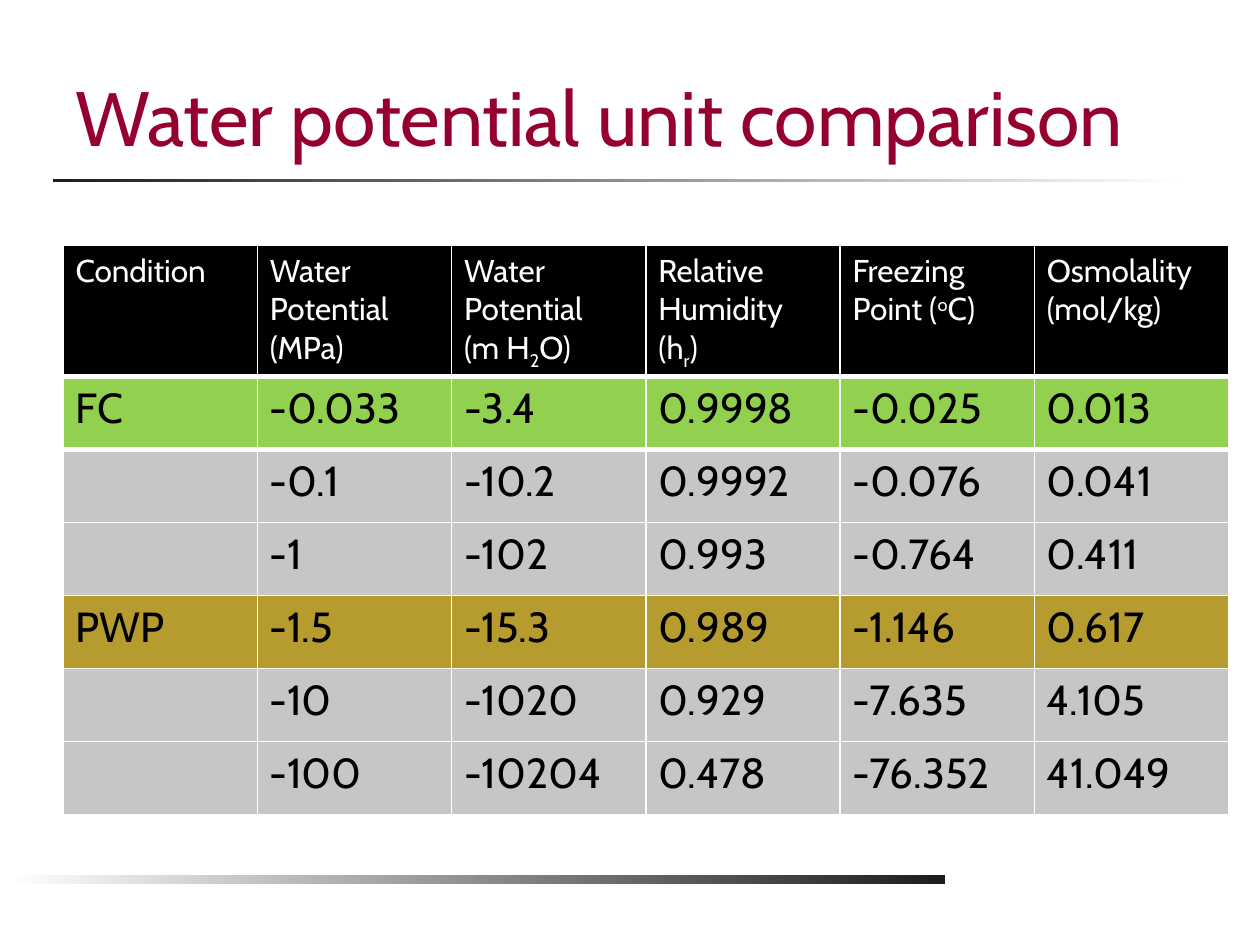
from lxml import etree
from pptx import Presentation
from pptx import util as u
from pptx.dml.color import RGBColor
from pptx.enum import shapes, text
from pptx.oxml.ns import qn

COLOURS = {
    "title": "96002E",
    "dark": "1C1C1C",
    "white": "FFFFFF",
    "black": "000000",
    "field_capacity": "92D050",
    "wilting_point": "B69C2E",
    "plain": "C6C6C6",
}

HEADINGS = [
    [("Condition", 0)],
    [("Water Potential (MPa)", 0)],
    [("Water Potential \n(m H", 0), ("2", -25), ("O)", 0)],
    [("Relative Humidity \n(h", 0), ("r", -25), (")", 0)],
    [("Freezing Point (", 0), ("o", 30), ("C)", 0)],
    [("Osmolality (mol/kg)", 0)],
]

CONDITIONS = [
    ("field_capacity", "FC", "-0.033", "-3.4", "0.9998", "-0.025", "0.013"),
    ("plain", "", "-0.1", "-10.2", "0.9992", "-0.076", "0.041"),
    ("plain", "", "-1", "-102", "0.993", "-0.764", "0.411"),
    ("wilting_point", "PWP", "-1.5", "-15.3", "0.989", "-1.146", "0.617"),
    ("plain", "", "-10", "-1020", "0.929", "-7.635", "4.105"),
    ("plain", "", "-100", "-10204", "0.478", "-76.352", "41.049"),
]


def rgb(name):
    """Return the named colour."""
    return RGBColor.from_string(COLOURS[name])


def write(frame, pieces, size, colour, font="Cabin"):
    """Write (text, baseline) pieces into the first paragraph of a frame."""
    paragraph = frame.paragraphs[0]
    for content, baseline in pieces:
        for index, line in enumerate(content.split("\n")):
            if index:
                paragraph.add_line_break()
            run = paragraph.add_run()
            run.text = line
            run.font.name = font
            run.font.size = u.Pt(size)
            run.font.bold = False
            run.font.color.rgb = rgb(colour)
            if baseline:
                run.font._element.set("baseline", str(baseline * 1000))


class SlideBuilder:
    """Hold the style and the current slide."""

    def __init__(self, slide, line_colour="white"):
        """Keep the slide and the colour of table borders."""
        self.slide = slide
        self.line_colour = line_colour

    def title(self, content, left, top, width, height):
        """Add the bottom-anchored title."""
        frame = self.slide.shapes.add_textbox(left, top, width, height).text_frame
        frame.word_wrap = True
        frame.vertical_anchor = text.MSO_ANCHOR.BOTTOM
        write(frame, [(content, 0)], size=44, colour="title")

    def fading_bar(self, left, top, width, height, colours):
        """Add a bar that fades from the first colour to the second."""
        shape = self.slide.shapes.add_shape(
            shapes.MSO_SHAPE.RECTANGLE, left, top, width, height)
        shape.shadow.inherit = False
        shape.line.fill.background()
        shape.fill.gradient()
        shape.fill.gradient_angle = 0
        for position, (stop, colour) in enumerate(
                zip(shape.fill.gradient_stops, colours)):
            stop.position = position
            stop.color.rgb = rgb(colour)

    def border(self, cell, side, width):
        """Add a solid line on one side of a cell."""
        properties = cell._tc.get_or_add_tcPr()
        line = etree.SubElement(properties, qn(f"a:ln{side}"), w=str(u.Pt(width)))
        fill = etree.SubElement(line, qn("a:solidFill"))
        etree.SubElement(fill, qn("a:srgbClr"), val=COLOURS[self.line_colour])

    def cell(self, cell, pieces, fill, size, colour, top, bottom):
        """Fill a cell with its text, borders and background."""
        for side, width in (("L", 1), ("R", 1), ("T", top), ("B", bottom)):
            self.border(cell, side, width)
        cell.fill.solid()
        cell.fill.fore_color.rgb = rgb(fill)
        write(cell.text_frame, pieces, size, colour)

    def table(self, left, top, width, header_height, row_height):
        """Add the comparison table, with thick lines around its first data row."""
        count = len(CONDITIONS)
        table = self.slide.shapes.add_table(
            count + 1, len(HEADINGS), left, top, width,
            header_height + count * row_height).table
        table.horz_banding = False
        for index, row in enumerate(table.rows):
            row.height = row_height if index else header_height
        for column, pieces in enumerate(HEADINGS):
            self.cell(table.cell(0, column), pieces, "black", 18, "white", 1, 3)
        for row, (fill, *values) in enumerate(CONDITIONS, start=1):
            top_width = 3 if row <= 2 else 1
            bottom_width = 3 if row == 1 else 1
            for column, value in enumerate(values):
                pieces = [(value, 0)] if value else []
                self.cell(table.cell(row, column), pieces, fill, 24, "black",
                          top_width, bottom_width)


def main():
    """Build and save the slide."""
    presentation = Presentation()
    presentation.slide_width = u.Cm(25.4)
    presentation.slide_height = u.Cm(19.05)
    builder = SlideBuilder(
        presentation.slides.add_slide(presentation.slide_layouts[6]))
    builder.fading_bar(u.Cm(1.06), u.Cm(3.6), u.Cm(22.86), u.Cm(0.08),
                       ("dark", "white"))
    builder.fading_bar(u.Cm(0.16), u.Cm(17.63), u.Cm(18.9), u.Cm(0.2),
                       ("white", "dark"))
    builder.title("Water potential unit comparison",
                  u.Cm(1.27), u.Cm(0.58), u.Cm(23.57), u.Cm(2.8))
    builder.table(u.Cm(1.27), u.Cm(4.95), u.Cm(23.5), u.Cm(2.26), u.Cm(1.47))
    presentation.save("out.pptx")


if __name__ == "__main__":
    main()
